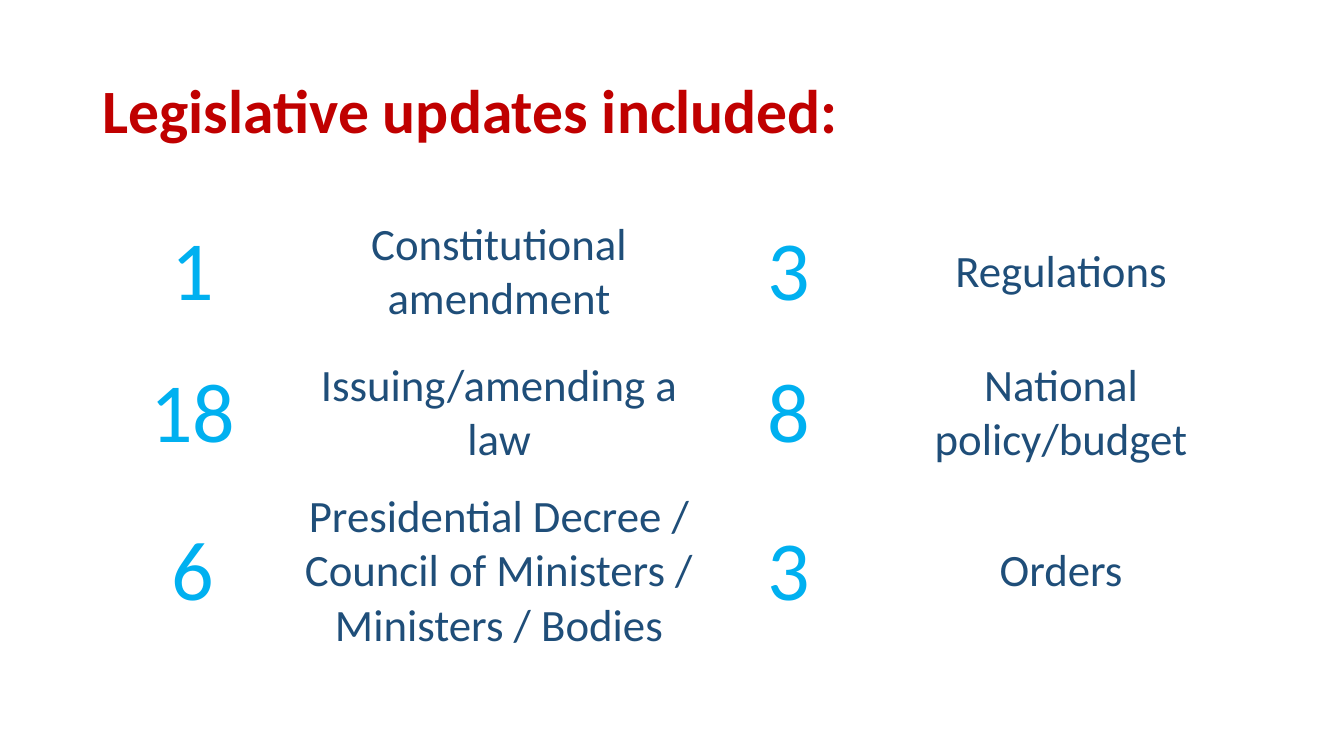
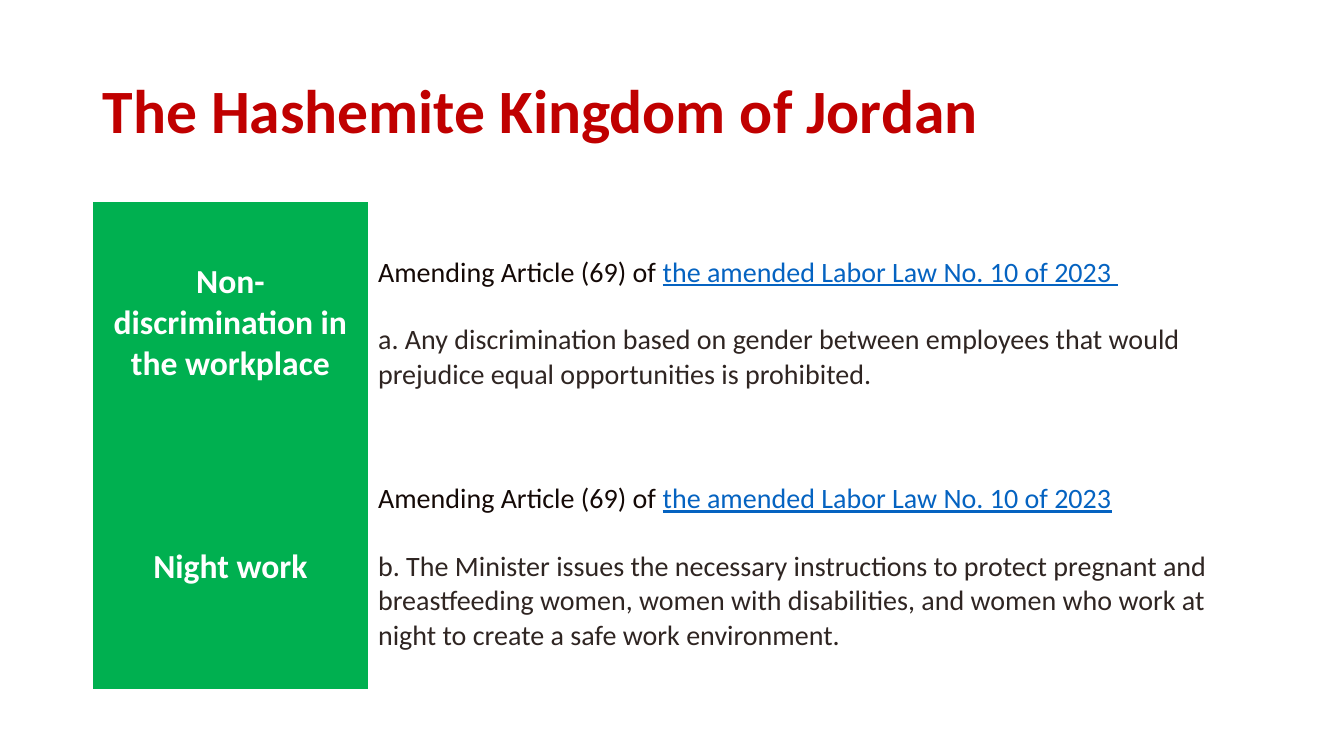
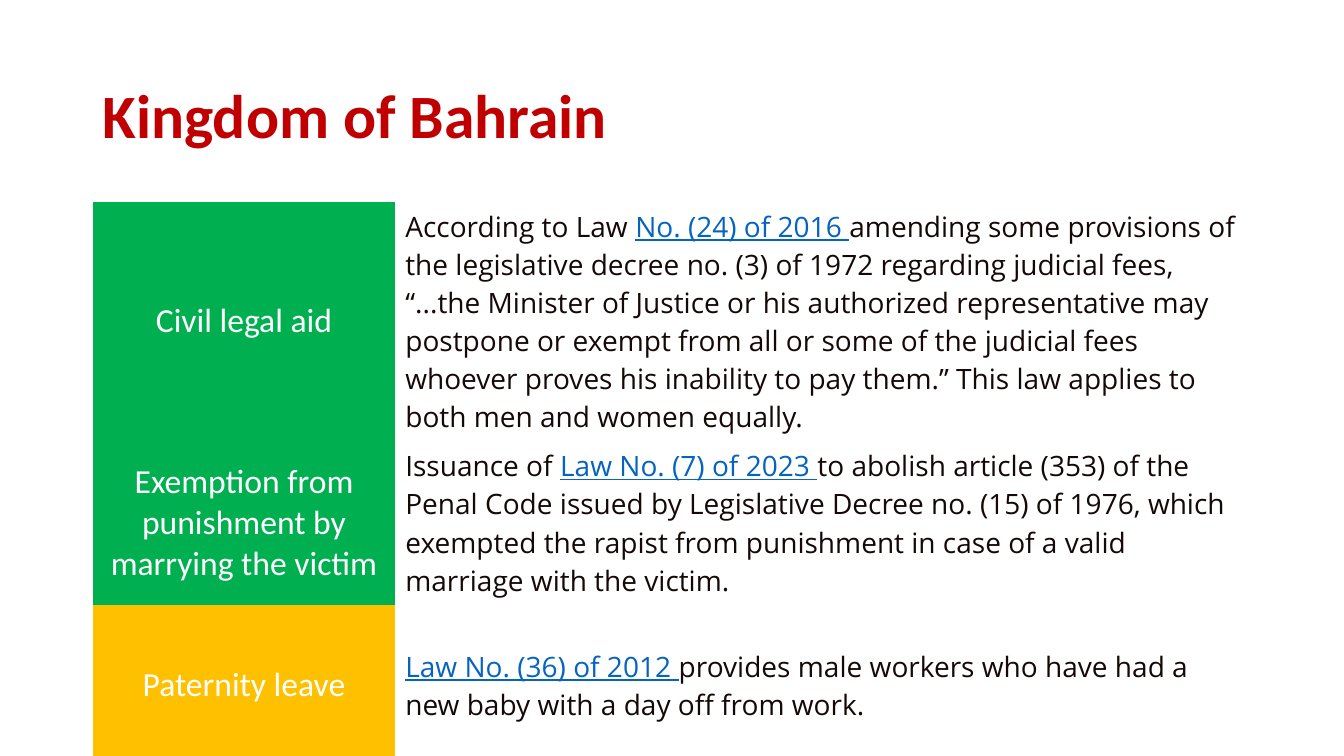
from pptx import Presentation
from pptx.dml.color import RGBColor
from pptx.enum.text import MSO_ANCHOR, PP_ALIGN
from pptx.oxml.ns import qn
from pptx.util import Inches, Pt

COLORS = {
    "title": "C00000", "number": "00B0F0", "label": "1F4E79",
    "green": "00B050", "amber": "FFC000", "white": "FFFFFF",
    "body": "140906", "clause": "2F2522", "law": "0563C1",
}
NO_STYLE_NO_GRID = "{2D5ABB26-0587-4C30-8999-92F81FD0307C}"
LEFT, WIDTH = 0.92, 11.5
TITLE_TOP, TITLE_HEIGHT, TABLE_TOP = 0.4, 1.45, 2

UPDATES = {
    "title": "Legislative updates included:",
    "columns": [1.98, 4.1, 1.64, 3.77],
    "heights": [1.4, 1.4, 1.74],
    "rows": [
        ("1", "Constitutional amendment", "3", "Regulations"),
        ("18", "Issuing/amending a law", "8", "National policy/budget"),
        ("6", "Presidential Decree / Council of Ministers / Ministers / Bodies", "3", "Orders"),
    ],
}

COUNTRIES = [
    {
        "title": "The Hashemite Kingdom of Jordan",
        "title_spacing": 0.9,
        "columns": [2.73, 8.77],
        "heights": [2.42, 2.42],
        "topic_bold": True,
        "font": "Calibri",
        "rows": [
            ("Non-discrimination in the workplace", "green", [
                [("Amending Article (69) of ", "body"),
                 ("the amended Labor Law No. 10 of 2023 ", "law")],
                [("a. Any discrimination based on gender between employees that would "
                  "prejudice equal opportunities is prohibited.", "clause")],
            ]),
            ("Night work", "green", [
                [("Amending Article (69) of ", "body"),
                 ("the amended Labor Law No. 10 of 2023", "law")],
                [("b. The Minister issues the necessary instructions to protect pregnant and "
                  "breastfeeding women, women with disabilities, and women who work at "
                  "night to create a safe work environment.", "clause")],
            ]),
        ],
    },
    {
        "title": "Kingdom of Bahrain",
        "title_spacing": 1.0,
        "columns": [3, 8.5],
        "heights": [2.38, 1.62, 1.6],
        "topic_bold": False,
        "font": "Open Sans",
        "rows": [
            ("Civil legal aid", "green", [
                [("According to Law ", "body"), ("No. (24) of 2016 ", "law"),
                 ("amending some provisions of the legislative decree no. (3) of 1972 "
                  "regarding judicial fees, “...the Minister of Justice or his authorized "
                  "representative may postpone or exempt from all or some of the judicial "
                  "fees whoever proves his inability to pay them.” This law applies to "
                  "both men and women equally.", "body")],
            ]),
            ("Exemption from punishment by marrying the victim", "green", [
                [("Issuance of ", "body"), ("Law No. (7) of 2023 ", "law"),
                 ("to abolish article (353) of the Penal Code issued by Legislative Decree "
                  "no. (15) of 1976, which exempted the rapist from punishment in case of a "
                  "valid marriage with the victim.", "body")],
            ]),
            ("Paternity leave", "amber", [
                [("Law No. (36) of 2012 ", "law"),
                 ("provides male workers who have had a new baby with a day off from work.",
                  "body")],
            ]),
        ],
    },
]


def write(frame, paragraphs, size, font="Calibri", bold=False,
          align=PP_ALIGN.LEFT, line_spacing=1.0, gap=0):
    frame.word_wrap = True
    for index, pieces in enumerate(paragraphs):
        paragraph = frame.add_paragraph() if index else frame.paragraphs[0]
        paragraph.alignment = align
        paragraph.line_spacing = line_spacing
        if index:
            paragraph.space_before = Pt(gap)
        for words, color in pieces:
            run = paragraph.add_run()
            run.text = words
            run.font.size = Pt(size)
            run.font.name = font
            run.font.bold = bold
            run.font.underline = color == "law"
            run.font.color.rgb = RGBColor.from_string(COLORS[color])


def add_titled_slide(deck, title, spacing=0.9):
    slide = deck.slides.add_slide(deck.slide_layouts[6])
    heading = slide.shapes.add_textbox(
        Inches(LEFT), Inches(TITLE_TOP), Inches(WIDTH), Inches(TITLE_HEIGHT)).text_frame
    heading.vertical_anchor = MSO_ANCHOR.MIDDLE
    write(heading, [[(title, "title")]], 44, bold=True, line_spacing=spacing)
    return slide


def add_plain_table(slide, columns, heights):
    table = slide.shapes.add_table(
        len(heights), len(columns), Inches(LEFT), Inches(TABLE_TOP),
        Inches(WIDTH), Inches(sum(heights))).table
    table.first_row = table.horz_banding = False
    table._tbl.tblPr.find(qn("a:tableStyleId")).text = NO_STYLE_NO_GRID
    for column, width in zip(table.columns, columns):
        column.width = Inches(width)
    for row, height in zip(table.rows, heights):
        row.height = Inches(height)
    for cell in table.iter_cells():
        cell.vertical_anchor = MSO_ANCHOR.MIDDLE
        cell.fill.background()
    return table


def build_updates(deck):
    slide = add_titled_slide(deck, UPDATES["title"])
    table = add_plain_table(slide, UPDATES["columns"], UPDATES["heights"])
    for r, row in enumerate(UPDATES["rows"]):
        for c, words in enumerate(row):
            color, size = ("label", 32) if c % 2 else ("number", 60)
            write(table.cell(r, c).text_frame, [[(words, color)]], size,
                  align=PP_ALIGN.CENTER)


def build_country(deck, country):
    slide = add_titled_slide(deck, country["title"], country["title_spacing"])
    table = add_plain_table(slide, country["columns"], country["heights"])
    for r, (topic, status, provisions) in enumerate(country["rows"]):
        topic_cell = table.cell(r, 0)
        topic_cell.fill.solid()
        topic_cell.fill.fore_color.rgb = RGBColor.from_string(COLORS[status])
        write(topic_cell.text_frame, [[(topic, "white")]], 24,
              bold=country["topic_bold"], align=PP_ALIGN.CENTER)
        write(table.cell(r, 1).text_frame, provisions, 20, font=country["font"], gap=24)


def main():
    deck = Presentation()
    deck.slide_width, deck.slide_height = Inches(13.33), Inches(7.5)
    build_updates(deck)
    for country in COUNTRIES:
        build_country(deck, country)
    deck.save("out.pptx")


if __name__ == "__main__":
    main()
